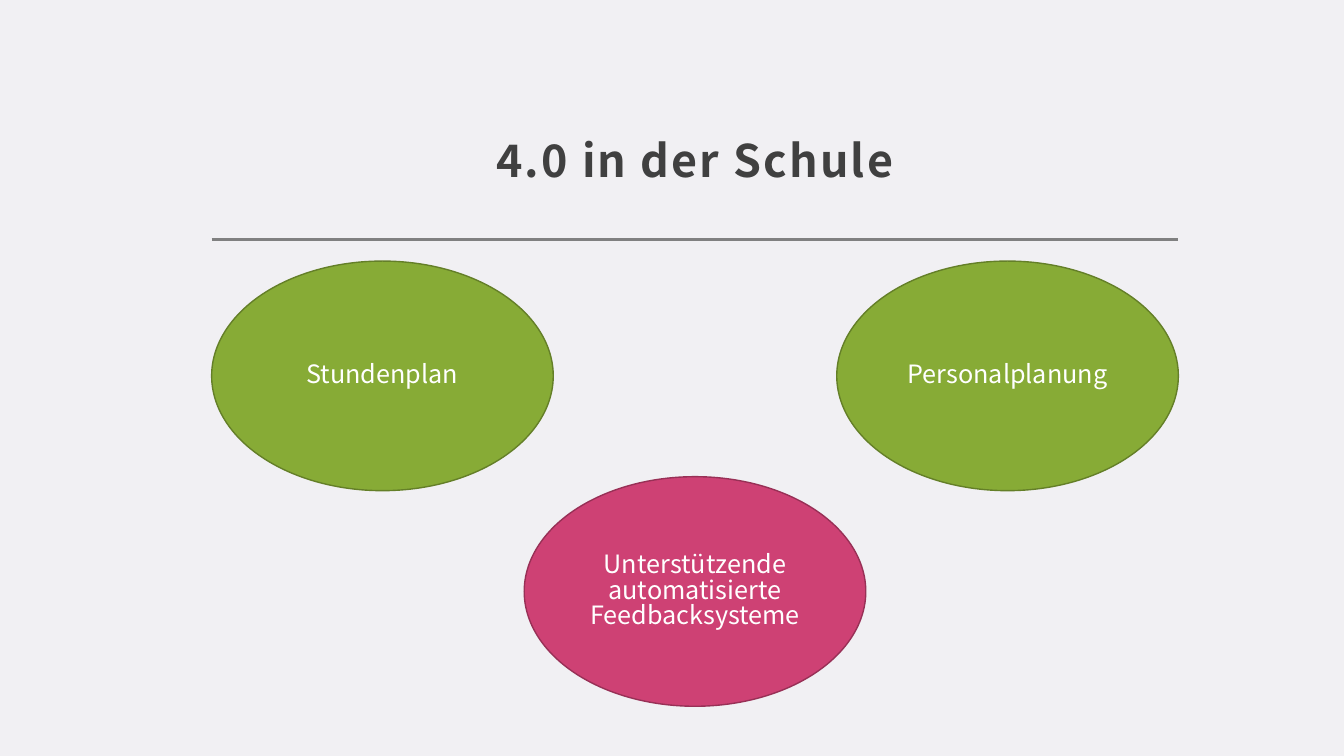
from pptx import Presentation
from pptx.dml.color import RGBColor
from pptx.enum.shapes import MSO_CONNECTOR, MSO_SHAPE
from pptx.enum.text import MSO_ANCHOR, MSO_AUTO_SIZE, PP_ALIGN
from pptx.oxml.ns import qn
from pptx.util import Pt
from lxml import etree

BACKGROUND = RGBColor(0xF1, 0xF0, 0xF3)
DARK = RGBColor(0x40, 0x40, 0x40)
GRAY = RGBColor(0x80, 0x80, 0x80)
WHITE = RGBColor(0xFF, 0xFF, 0xFF)
GREEN = RGBColor(0x87, 0xAB, 0x36)
GREEN_EDGE = RGBColor(0x64, 0x7F, 0x28)
PINK = RGBColor(0xCE, 0x41, 0x74)
PINK_EDGE = RGBColor(0x98, 0x30, 0x56)

CENTER = PP_ALIGN.CENTER
MIDDLE = MSO_ANCHOR.MIDDLE
BOTTOM = MSO_ANCHOR.BOTTOM
NO_AUTOFIT = MSO_AUTO_SIZE.NONE
ELLIPSE = MSO_SHAPE.OVAL
STRAIGHT = MSO_CONNECTOR.STRAIGHT

FONT = "Noto Sans CJK JP"
TITLE = "4.0 in der Schule"
TOPICS = [
    ("Stundenplan", 0, 0, GREEN, GREEN_EDGE),
    ("Personalplanung", 2, 0, GREEN, GREEN_EDGE),
    ("Unterstützende automatisierte Feedbacksysteme", 1, 1, PINK, PINK_EDGE),
]

LEFT, WIDTH = 151.2, 690.5
RULE_TOP = 171.3
TOPIC_TOP, TOPIC_WIDTH, TOPIC_HEIGHT = 186.5, 244, 164
COLUMN_STEP = (WIDTH - TOPIC_WIDTH) / 2
ROW_STEP = 154


def format_paragraph(para, size, color, spacing, bold=False):
    para.alignment = CENTER
    para.line_spacing = spacing
    para.font.name = FONT
    para.font.size = Pt(size)
    para.font.bold = bold
    para.font.color.rgb = color


def add_title(page):
    title = page.shapes.title
    title.left, title.top = Pt(LEFT), Pt(34.6)
    title.width, title.height = Pt(WIDTH), Pt(105.8)
    frame = title.text_frame
    frame.text = TITLE
    frame.word_wrap = True
    frame.auto_size = NO_AUTOFIT
    frame.vertical_anchor = BOTTOM
    frame.margin_left = frame.margin_right = frame.margin_top = Pt(8.6)
    frame.margin_bottom = Pt(7.2)
    para = frame.paragraphs[0]
    format_paragraph(para, 32, DARK, 1.3, bold=True)
    para.runs[0]._r.get_or_add_rPr().set("spc", "150")


def add_rule(page):
    rule = page.shapes.add_connector(
        STRAIGHT, Pt(LEFT), Pt(RULE_TOP), Pt(LEFT + WIDTH), Pt(RULE_TOP))
    rule.line.color.rgb = GRAY
    rule.line.width = Pt(2)
    etree.SubElement(rule._element.spPr, qn("a:effectLst"))


def add_topic(page, text, column, row, fill, edge):
    topic = page.shapes.add_shape(
        ELLIPSE, Pt(LEFT + column * COLUMN_STEP), Pt(TOPIC_TOP + row * ROW_STEP),
        Pt(TOPIC_WIDTH), Pt(TOPIC_HEIGHT))
    topic.shadow.inherit = False
    topic.fill.solid()
    topic.fill.fore_color.rgb = fill
    topic.line.color.rgb = edge
    topic.line.width = Pt(1)
    frame = topic.text_frame
    frame.text = text
    frame.word_wrap = True
    frame.vertical_anchor = MIDDLE
    format_paragraph(frame.paragraphs[0], 18, WHITE, 0.84)


def main():
    deck = Presentation()
    deck.slide_width, deck.slide_height = Pt(960), Pt(540)
    page = deck.slides.add_slide(deck.slide_layouts[5])
    page.background.fill.solid()
    page.background.fill.fore_color.rgb = BACKGROUND
    add_rule(page)
    add_title(page)
    for topic in TOPICS:
        add_topic(page, *topic)
    deck.save("out.pptx")


if __name__ == "__main__":
    main()
